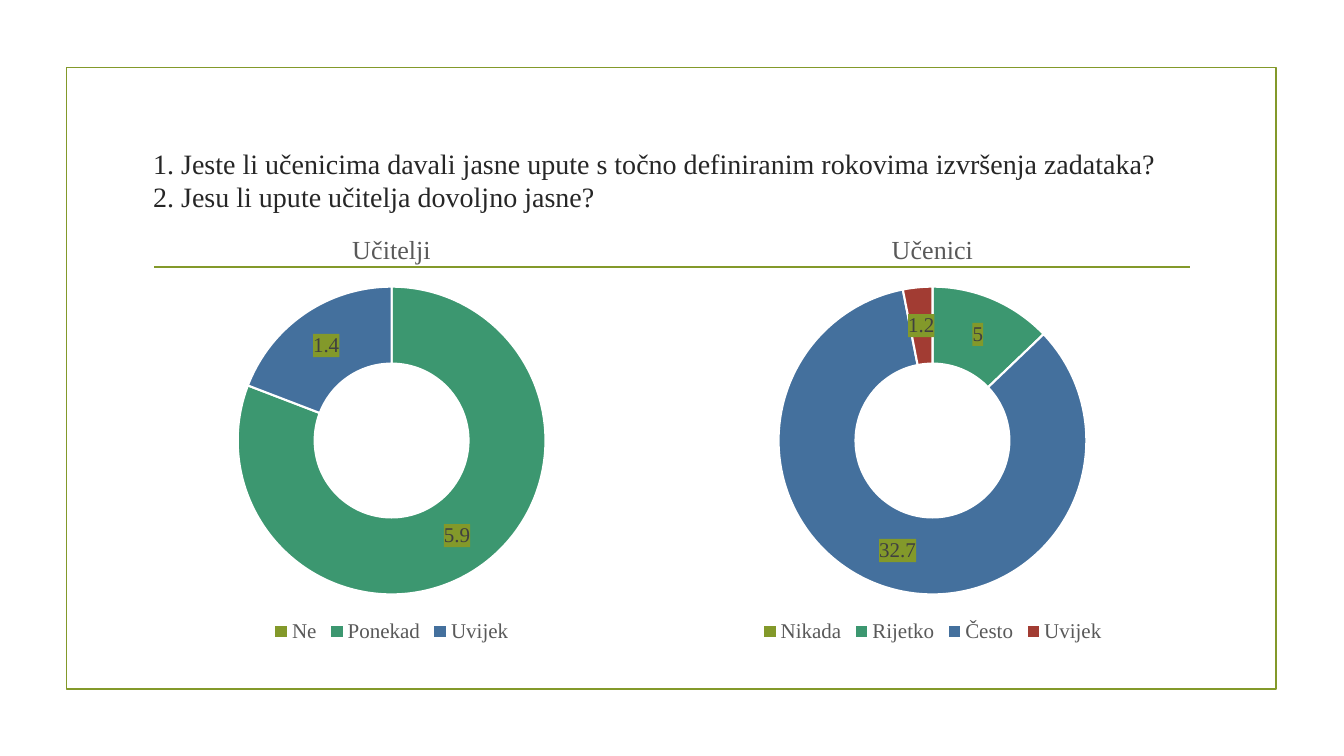
from lxml.etree import SubElement
from pptx import Presentation
from pptx.chart.data import CategoryChartData
from pptx.dml.color import RGBColor
from pptx.enum.chart import XL_CHART_TYPE, XL_LEGEND_POSITION
from pptx.enum.shapes import MSO_CONNECTOR, MSO_SHAPE
from pptx.enum.text import MSO_ANCHOR, PP_ALIGN
from pptx.oxml import parse_xml
from pptx.oxml.ns import nsdecls, qn
from pptx.util import Pt

FACE = "Times New Roman"
OLIVE = "83992A"
GREY = "595959"
SLICES = (OLIVE, "3C9770", "44709D", "A23C33")
CLEAR = "<a:noFill/><a:ln><a:noFill/></a:ln>"
SOLID = f'<a:solidFill><a:srgbClr val="{OLIVE}"/></a:solidFill>'


def tint(code):
    return RGBColor.from_string(code)


def style(font, size, color, bold=False):
    font.name = FACE
    font.size = Pt(size)
    font.bold = bold
    font.color.rgb = tint(color)


def write(frame, text, size=20, color="262626", align=PP_ALIGN.LEFT):
    para = frame.paragraphs[0]
    para.text = text
    para.alignment = align
    for run in para.runs:
        style(run.font, size, color)


def panel(inner):
    """Make the shape properties of a chart part."""
    return parse_xml(f'<c:spPr {nsdecls("c", "a")}>{inner}</c:spPr>')


class Page:
    def __init__(self, deck):
        self.slide = deck.slides.add_slide(deck.slide_layouts[5])
        self.shapes = self.slide.shapes
        self.edge = OLIVE
        self.width = 1.25

    def pen(self, line):
        line.color.rgb = tint(self.edge)
        line.width = Pt(self.width)

    def title(self, text, *box):
        head = self.shapes.title
        head.left, head.top, head.width, head.height = map(Pt, box)
        head.text_frame.word_wrap = True
        head.text_frame.vertical_anchor = MSO_ANCHOR.MIDDLE
        write(head.text_frame, text)

    def frame(self, *box):
        rect = self.shapes.add_shape(MSO_SHAPE.RECTANGLE, *map(Pt, box))
        rect.shadow.inherit = False
        rect.fill.background()
        self.pen(rect.line)

    def rule(self, *ends):
        line = self.shapes.add_connector(MSO_CONNECTOR.STRAIGHT, *map(Pt, ends))
        self.pen(line.line)
        SubElement(line._element.spPr, qn("a:effectLst"))

    def ring(self, name, data, *box):
        table = CategoryChartData()
        table.categories = list(data)
        table.add_series(name, list(data.values()))
        chart = self.shapes.add_chart(
            XL_CHART_TYPE.DOUGHNUT, *map(Pt, box), table).chart
        style(chart.font, 10, "000000")
        chart._chartSpace.find(qn("c:txPr")).addprevious(panel(CLEAR))

        chart.has_title = True
        write(chart.chart_title.text_frame, name, 18.6, GREY, PP_ALIGN.CENTER)
        chart.chart_title.include_in_layout = False
        chart.has_legend = True
        chart.legend.position = XL_LEGEND_POSITION.BOTTOM
        chart.legend.include_in_layout = False
        style(chart.legend.font, 15, GREY)

        plot = chart.plots[0]
        plot.vary_by_categories = True
        plot._element.find(qn("c:holeSize")).set("val", "75")
        series = plot.series[0]
        labels = series.data_labels
        labels.show_value = True
        style(labels.font, 15, "404040")
        labels._element.find(qn("c:txPr")).addprevious(panel(SOLID))
        for i, (value, color) in enumerate(zip(data.values(), SLICES)):
            part = series.points[i].format
            part.fill.solid()
            part.fill.fore_color.rgb = tint(color)
            part.line.color.rgb = tint("FFFFFF")
            part.line.width = Pt(1.5)
            if value == 0:
                labels._element.insert(0, parse_xml(
                    f'<c:dLbl {nsdecls("c")}><c:idx val="{i}"/>'
                    '<c:delete val="1"/></c:dLbl>'))


def main():
    deck = Presentation()
    deck.slide_width, deck.slide_height = Pt(960), Pt(540)
    page = Page(deck)
    page.frame(47.5, 48.2, 864, 444.2)
    page.rule(110.2, 190.8, 850.3, 190.8)
    page.title("1. Jeste li učenicima davali jasne upute s točno definiranim "
               "rokovima izvršenja zadataka?\n"
               "2. Jesu li upute učitelja dovoljno jasne?",
               102.2, 77, 756, 103)
    page.ring("Učitelji", {"Ne": 0, "Ponekad": 5.9, "Uvijek": 1.4},
              85.7, 153.4, 388.1, 308.9)
    page.ring("Učenici", {"Nikada": 0, "Rijetko": 5, "Često": 32.7, "Uvijek": 1.2},
              473.8, 153.4, 384.5, 308.9)
    deck.save("out.pptx")


if __name__ == "__main__":
    main()
